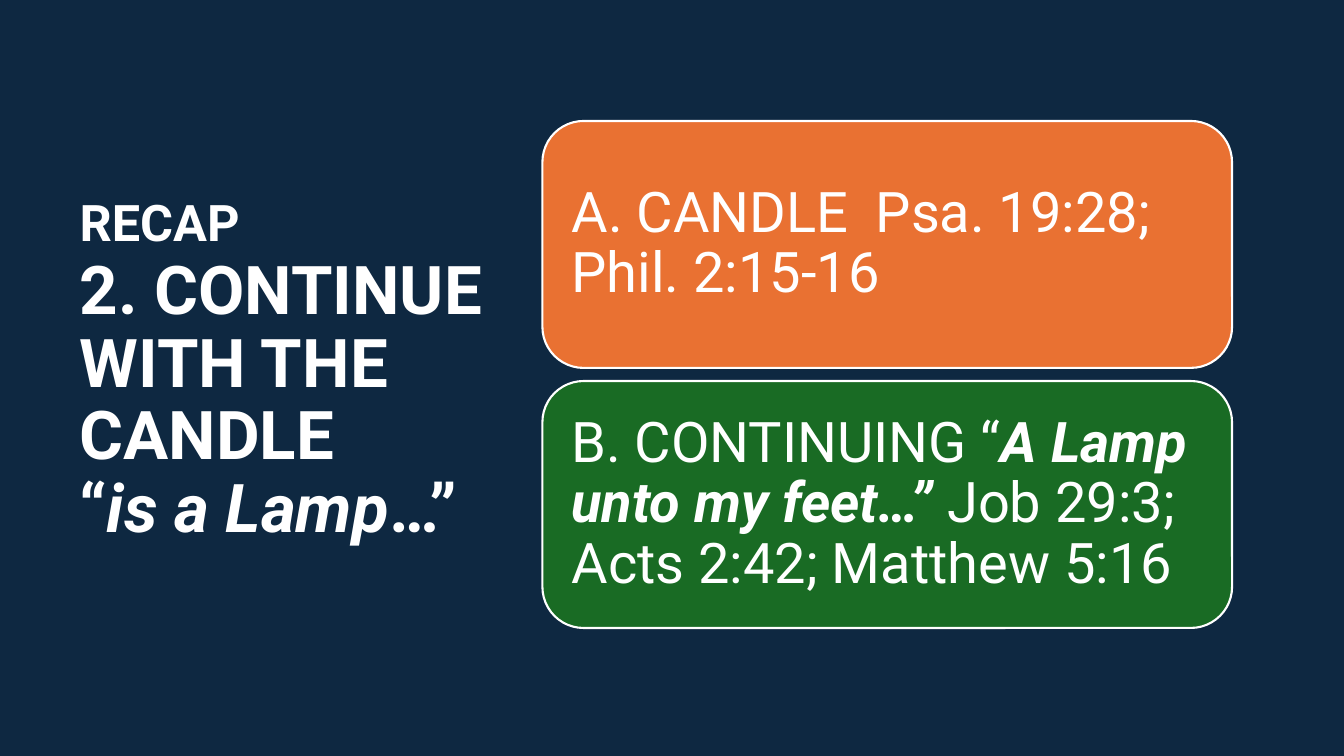
from pptx import Presentation
from pptx.dml.color import RGBColor
from pptx.enum.shapes import MSO_SHAPE
from pptx.enum.text import MSO_ANCHOR, MSO_AUTO_SIZE, PP_ALIGN
from pptx.util import Inches, Pt

ROUNDED = MSO_SHAPE.ROUNDED_RECTANGLE
MIDDLE = MSO_ANCHOR.MIDDLE
NO_FIT = MSO_AUTO_SIZE.NONE
LEFT = PP_ALIGN.LEFT

NAVY = RGBColor(0x0E, 0x28, 0x41)
ORANGE = RGBColor(0xE9, 0x71, 0x32)
GREEN = RGBColor(0x19, 0x6B, 0x24)
WHITE = RGBColor(0xFF, 0xFF, 0xFF)


def set_frame(frame):
    frame.word_wrap = True
    frame.auto_size = NO_FIT
    frame.vertical_anchor = MIDDLE
    para = frame.paragraphs[0]
    para.alignment = LEFT
    para.line_spacing = 0.9
    return para


def add_span(para, text, size, bold=False, italic=False):
    span = para.add_run()
    span.text = text
    span.font.name = "Roboto"
    span.font.size = Pt(size)
    span.font.bold = bold
    span.font.italic = italic
    span.font.color.rgb = WHITE


deck = Presentation()
deck.slide_width, deck.slide_height = Inches(13.33), Inches(7.5)
page = deck.slides.add_slide(deck.slide_layouts[5])
page.background.fill.solid()
page.background.fill.fore_color.rgb = NAVY

# Title: a list of lines, each a list of (text, size, italic)
title_lines = [
    [("RECAP", 36, False), (" ", 48, False)],
    [("2. CONTINUE WITH THE CANDLE", 48, False)],
    [("“", 48, False), ("is a Lamp", 48, True), ("…”", 48, False)],
]
title = page.shapes.title
title.left, title.top = Inches(0.69), Inches(0.54)
title.width, title.height = Inches(4.59), Inches(6.17)
para = set_frame(title.text_frame)
for index, line in enumerate(title_lines):
    if index:
        para.add_line_break()
    for text, size, italic in line:
        add_span(para, text, size, bold=True, italic=italic)

# Cards stacked at an equal pitch: fill and (text, emphasised) runs
CARD_TOP, CARD_HEIGHT, CARD_PITCH = 1.2, 2.45, 2.58
cards = [
    (ORANGE, [("A. CANDLE  Psa. 19:28; Phil. 2:15-16", False)]),
    (GREEN, [("B. CONTINUING “", False),
             ("A Lamp unto my feet…” ", True),
             ("Job 29:3; Acts 2:42; Matthew 5:16", False)]),
]
for row, (color, spans) in enumerate(cards):
    card = page.shapes.add_shape(
        ROUNDED, Inches(5.38), Inches(CARD_TOP + row * CARD_PITCH),
        Inches(6.84), Inches(CARD_HEIGHT))
    card.shadow.inherit = False
    card.fill.solid()
    card.fill.fore_color.rgb = color
    card.line.color.rgb = WHITE
    card.line.width = Pt(1.5)
    frame = card.text_frame
    frame.margin_left = frame.margin_right = Inches(0.17)
    frame.margin_top = frame.margin_bottom = Inches(0.17)
    para = set_frame(frame)
    for text, emphasised in spans:
        add_span(para, text, 40, bold=emphasised, italic=emphasised)

deck.save("out.pptx")
